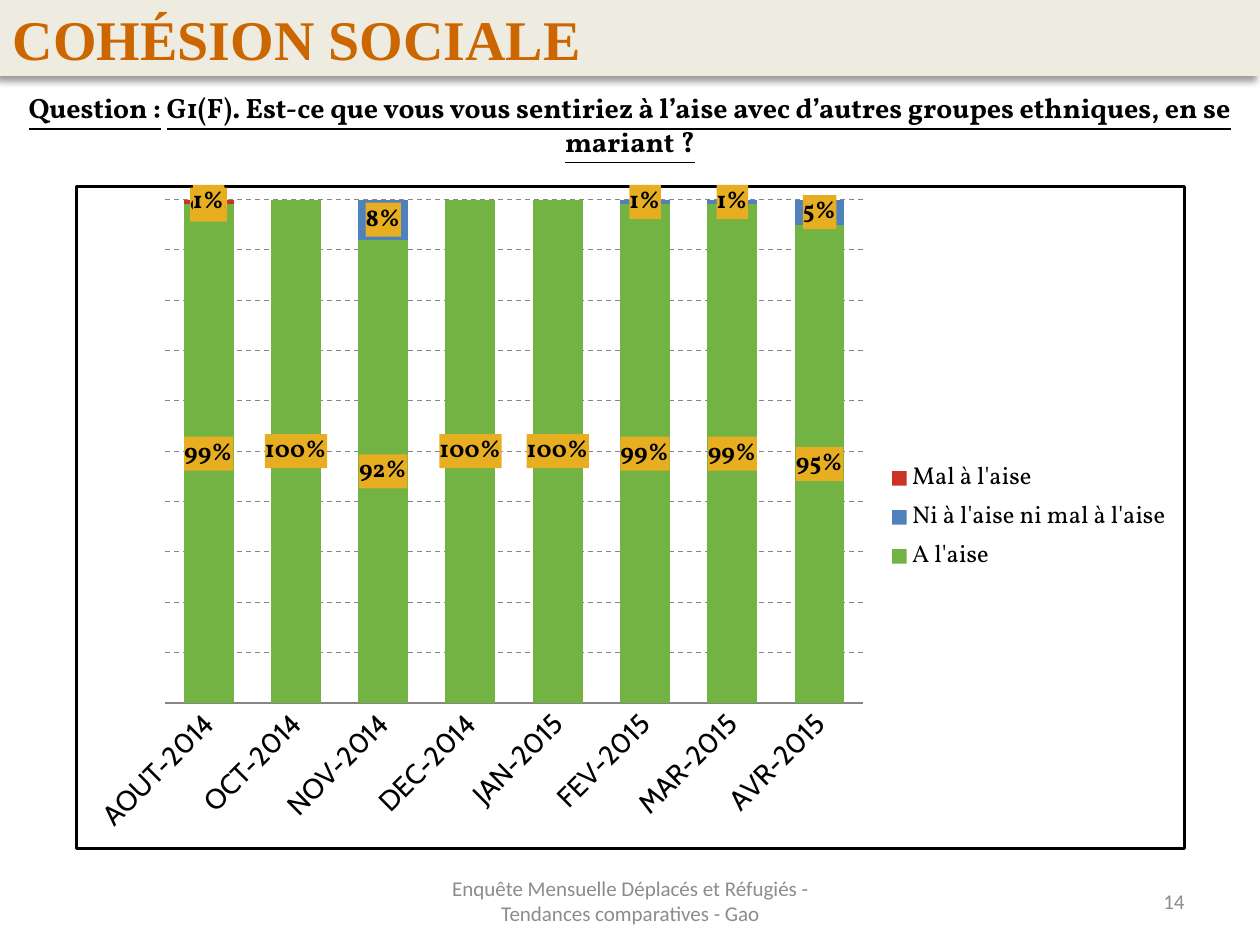
"""Build the social cohesion slide with a stacked column chart of answers by month."""
from dataclasses import dataclass

import lxml.etree
import pptx
import pptx.chart.data
import pptx.dml.color
import pptx.enum.chart
import pptx.enum.dml
import pptx.enum.text
import pptx.oxml
import pptx.oxml.ns
import pptx.util

SCALE = 914400 / 126
COLORS = {
    "band": "EEECE1", "title": "CC6600", "text": "000000", "footer": "8C8C8C",
    "label": "E7AE21", "grid": "868686", "white": "FFFFFF",
    "good": "73B343", "neutral": "4F81BD", "bad": "CA3424",
}
MONTHS = ["AOUT-2014", "OCT-2014", "NOV-2014", "DEC-2014",
          "JAN-2015", "FEV-2015", "MAR-2015", "AVR-2015"]
NS = pptx.oxml.ns.nsdecls("a", "c")
ALIGN = pptx.enum.text.PP_ALIGN


@dataclass
class Answer:
    name: str
    color: str
    values: list[float]
    unlabelled: list[int]


@dataclass
class Note:
    text: str
    box: tuple[int, int, int, int]
    align: ALIGN


ANSWERS = [
    Answer("A l'aise", "good", [0.99, 1, 0.92, 1, 1, 0.99, 0.99, 0.95], []),
    Answer("Ni à l'aise ni mal à l'aise", "neutral",
           [0, 0, 0.08, 0, 0, 0.01, 0.01, 0.05], [1, 3, 4]),
    Answer("Mal à l'aise", "bad", [0.01, 0, 0, 0, 0, 0, 0, 0], list(range(1, 8))),
]
NOTES = [
    Note("14", (903, 876, 294, 50), ALIGN.RIGHT),
    Note("Enquête Mensuelle Déplacés et Réfugiés - Tendances comparatives - Gao",
         (431, 876, 399, 50), ALIGN.CENTER),
]
QUESTION = [
    ("Question :", True),
    (" ", False),
    ("G1(F). Est-ce que vous vous sentiriez à l’aise avec d’autres groupes "
     "ethniques, en se mariant ?", True),
]


def px(n: int) -> int:
    return round(n * SCALE)


def rgb(key: str) -> pptx.dml.color.RGBColor:
    return pptx.dml.color.RGBColor.from_string(COLORS[key])


def xml(text: str) -> lxml.etree._Element:
    tag, rest = text.split(">", 1)
    return pptx.oxml.parse_xml(f"{tag} {NS}>{rest}")


def style(font, name: str, size: int, color: str, bold: bool = False) -> None:
    font.name = name
    font.size = pptx.util.Pt(size)
    font.bold = bold
    font.color.rgb = rgb(color)


def add_title(s) -> None:
    sp = s.shapes.title
    sp.left, sp.top, sp.width, sp.height = 0, 0, px(1260), px(76)
    sp.fill.solid()
    sp.fill.fore_color.rgb = rgb("band")
    sp._element.spPr.append(xml(
        '<a:effectLst><a:outerShdw blurRad="50800" dist="50800" dir="8100000">'
        f'<a:srgbClr val="{COLORS["text"]}"><a:alpha val="40000"/></a:srgbClr>'
        '</a:outerShdw></a:effectLst>'))
    tf = sp.text_frame
    tf.text = "COHÉSION SOCIALE"
    tf.vertical_anchor = pptx.enum.text.MSO_ANCHOR.MIDDLE
    tf.auto_size = pptx.enum.text.MSO_AUTO_SIZE.NONE
    tf.paragraphs[0].alignment = ALIGN.LEFT
    style(tf.paragraphs[0].runs[0].font, "Times New Roman", 32, "title", True)


def add_text(s, box: tuple[int, int, int, int], align: ALIGN):
    tf = s.shapes.add_textbox(*map(px, box)).text_frame
    tf.word_wrap = True
    tf.vertical_anchor = pptx.enum.text.MSO_ANCHOR.MIDDLE
    tf.paragraphs[0].alignment = align
    return tf.paragraphs[0]


def add_note(s, note: Note) -> None:
    p = add_text(s, note.box, note.align)
    p.text = note.text
    style(p.runs[0].font, "Calibri", 12, "footer")


def add_question(s) -> None:
    p = add_text(s, (0, 84, 1260, 81), ALIGN.CENTER)
    for text, underline in QUESTION:
        r = p.add_run()
        r.text = text
        style(r.font, "Vollkorn", 16, "text", True)
        r.font.underline = underline


def style_series(ser, answer: Answer) -> None:
    ser.format.fill.solid()
    ser.format.fill.fore_color.rgb = rgb(answer.color)
    ser.invert_if_negative = False
    labels = ser.data_labels
    labels.show_value = True
    labels.number_format = "0%"
    labels.number_format_is_linked = False
    style(labels.font, "Vollkorn", 14, "text", True)
    el = labels._element
    el.find(pptx.oxml.ns.qn("c:txPr")).addprevious(xml(
        f'<c:spPr><a:solidFill><a:srgbClr val="{COLORS["label"]}"/></a:solidFill></c:spPr>'))
    for i in reversed(answer.unlabelled):
        el.insert(0, xml(f'<c:dLbl><c:idx val="{i}"/><c:delete val="1"/></c:dLbl>'))


def style_axes(chart) -> None:
    cat, val = chart.category_axis, chart.value_axis
    cat.major_tick_mark = pptx.enum.chart.XL_TICK_MARK.NONE
    cat.format.line.color.rgb = rgb("grid")
    style(cat.tick_labels.font, "Cabin", 16, "text")
    body = cat._element.find(pptx.oxml.ns.qn("c:txPr")).find(pptx.oxml.ns.qn("a:bodyPr"))
    body.set("rot", "-2700000")
    body.set("vert", "horz")
    val.visible = False
    val.minimum_scale, val.maximum_scale, val.major_unit = 0, 1, 0.1
    val.tick_labels.number_format = "0%"
    val.tick_labels.number_format_is_linked = False
    val.has_major_gridlines = True
    line = val.major_gridlines.format.line
    line.color.rgb = rgb("grid")
    line.width = pptx.util.Pt(0.75)
    line.dash_style = pptx.enum.dml.MSO_LINE.DASH


def frame_chart(chart) -> None:
    space = chart._chartSpace
    space.find(pptx.oxml.ns.qn("c:txPr")).addprevious(xml(
        f'<c:spPr><a:solidFill><a:srgbClr val="{COLORS["white"]}"/></a:solidFill>'
        f'<a:ln w="19050"><a:solidFill><a:srgbClr val="{COLORS["text"]}"/>'
        '</a:solidFill></a:ln></c:spPr>'))
    area = space.chart.plotArea
    for old in area.findall(pptx.oxml.ns.qn("c:layout")):
        area.remove(old)
    sizes = {"x": 0.08, "y": 0.02, "w": 0.63, "h": 0.76}
    area.insert(0, xml(
        '<c:layout><c:manualLayout><c:layoutTarget val="inner"/>'
        '<c:xMode val="edge"/><c:yMode val="edge"/>'
        + "".join(f'<c:{k} val="{v}"/>' for k, v in sizes.items())
        + '</c:manualLayout></c:layout>'))


def add_chart(s) -> None:
    data = pptx.chart.data.CategoryChartData(number_format="0%")
    data.categories = MONTHS
    for answer in ANSWERS:
        data.add_series(answer.name, answer.values)
    chart = s.shapes.add_chart(pptx.enum.chart.XL_CHART_TYPE.COLUMN_STACKED_100,
                               *map(px, (75, 185, 1111, 665)), data).chart
    style(chart.font, "Calibri", 10, "text")
    chart.has_title = False
    chart.has_legend = True
    chart.legend.position = pptx.enum.chart.XL_LEGEND_POSITION.RIGHT
    chart.legend.include_in_layout = False
    style(chart.legend.font, "Vollkorn", 14, "text")
    plot = chart.plots[0]
    plot.gap_width, plot.overlap = 75, 100
    plot.vary_by_categories = False
    for ser, answer in zip(plot.series, ANSWERS):
        style_series(ser, answer)
    style_axes(chart)
    frame_chart(chart)


def main() -> None:
    prs = pptx.Presentation()
    prs.slide_width, prs.slide_height = px(1260), px(945)
    s = prs.slides.add_slide(prs.slide_layouts[5])
    for note in NOTES:
        add_note(s, note)
    add_title(s)
    add_question(s)
    add_chart(s)
    prs.save("out.pptx")


if __name__ == "__main__":
    main()
